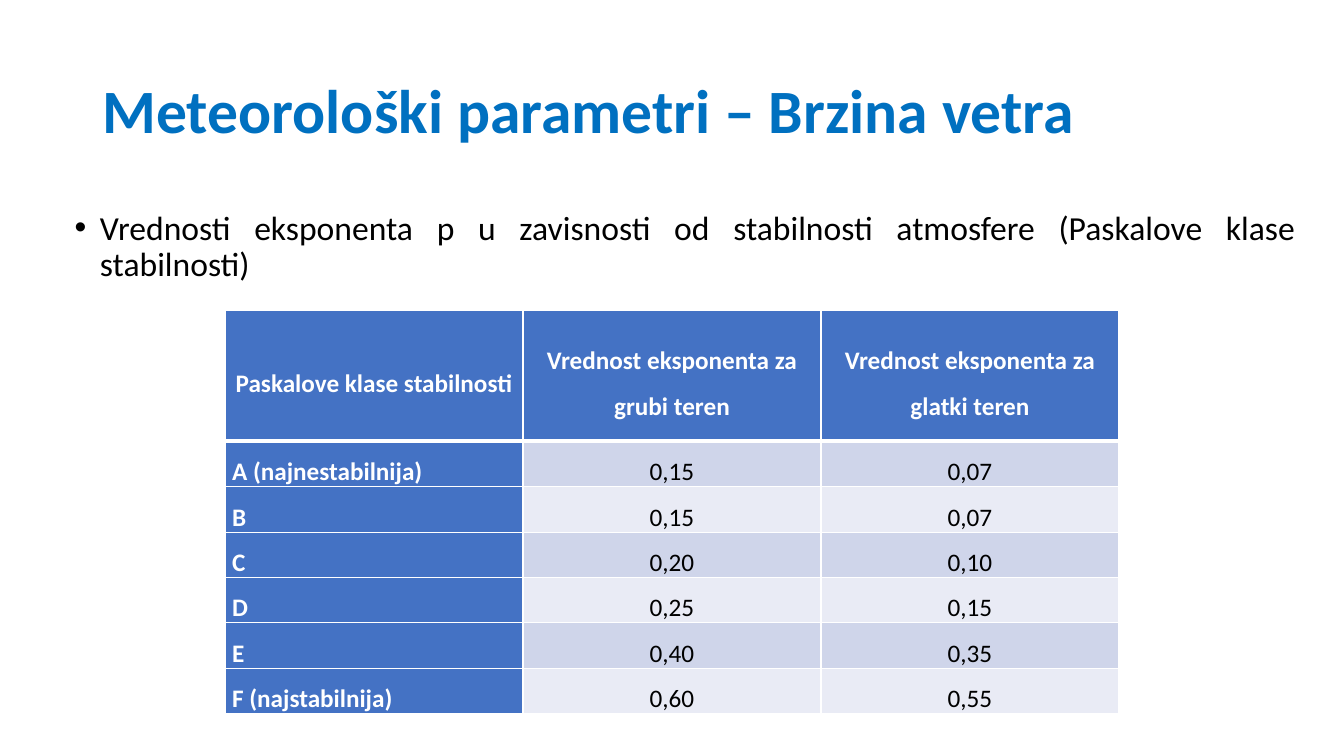
from lxml import etree
from pptx import Presentation
from pptx.dml.color import RGBColor
from pptx.enum.text import MSO_ANCHOR, PP_ALIGN
from pptx.oxml.ns import qn
from pptx.util import Cm, Pt

BLUE, WHITE, BLACK = "4472C4", "FFFFFF", "000000"
BANDS = ("CFD5EA", "E9EBF5")
HEADINGS = (
    "Paskalove klase stabilnosti",
    "Vrednost eksponenta za grubi teren",
    "Vrednost eksponenta za glatki teren",
)
EXPONENTS = (
    ("A (najnestabilnija)", "0,15", "0,07"),
    ("B", "0,15", "0,07"),
    ("C", "0,20", "0,10"),
    ("D", "0,25", "0,15"),
    ("E", "0,40", "0,35"),
    ("F (najstabilnija)", "0,60", "0,55"),
)


def color(hex_value):
    """Turn a hex string into a colour."""
    return RGBColor.from_string(hex_value)


def write(frame, text, size, hex_value, bold=False, align=None, spacing=0.9):
    """Put one formatted paragraph in a text frame and return it."""
    frame.text = text
    frame.word_wrap = True
    paragraph = frame.paragraphs[0]
    paragraph.alignment = align
    paragraph.line_spacing = spacing
    font = paragraph.runs[0].font
    font.name, font.size, font.bold = "Calibri", Pt(size), bold
    font.color.rgb = color(hex_value)
    return paragraph


def add_title(slide, text):
    """Place and format the slide title."""
    title = slide.shapes.title
    title.left, title.top, title.width, title.height = Cm(2.33), Cm(1.01), Cm(29.21), Cm(3.68)
    title.text_frame.vertical_anchor = MSO_ANCHOR.MIDDLE
    write(title.text_frame, text, 44, "0070C0", True, PP_ALIGN.LEFT)


def add_bullet(slide, text):
    """Add a justified statement with a hanging bullet."""
    statement = slide.shapes.add_textbox(Cm(1.63), Cm(5.2), Cm(31.27), Cm(2.1))
    paragraph = write(statement.text_frame, text, 24, BLACK, align=PP_ALIGN.JUSTIFY)
    properties = paragraph._p.get_or_add_pPr()
    properties.set("marL", str(Cm(0.64)))
    properties.set("indent", str(-Cm(0.64)))
    etree.SubElement(properties, qn("a:buFont"), typeface="Arial")
    etree.SubElement(properties, qn("a:buChar"), char="•")


def add_borders(cell, top, bottom):
    """Draw white cell borders with the given top and bottom widths."""
    properties = cell._tc.get_or_add_tcPr()
    for side, width in (("L", 1), ("R", 1), ("T", top), ("B", bottom)):
        line = etree.SubElement(properties, qn(f"a:ln{side}"), w=str(Pt(width)))
        fill = etree.SubElement(line, qn("a:solidFill"))
        etree.SubElement(fill, qn("a:srgbClr"), val=WHITE)


def format_cell(cell, text, row, column):
    """Fill one table cell according to its row and column."""
    heading, label = row == 0, column == 0
    strong = heading or label
    add_borders(cell, 3 if row == 1 else 1, 3 if heading else 1)
    cell.fill.solid()
    cell.fill.fore_color.rgb = color(BLUE if strong else BANDS[(row - 1) % 2])
    cell.margin_left = cell.margin_right = Cm(0.18)
    cell.margin_top = cell.margin_bottom = 0
    cell.vertical_anchor = MSO_ANCHOR.MIDDLE if heading else MSO_ANCHOR.TOP
    align = PP_ALIGN.JUSTIFY if label and not heading else PP_ALIGN.CENTER
    paragraph = write(cell.text_frame, text, 18, WHITE if strong else BLACK, strong, align, 1.5)
    paragraph.space_after = Pt(12)


def add_exponent_table(slide):
    """Add the table of exponents by stability class."""
    rows = (HEADINGS, *EXPONENTS)
    table = slide.shapes.add_table(
        len(rows), len(HEADINGS), Cm(5.67), Cm(7.82), Cm(22.53), Cm(9.72)
    ).table
    for column in table.columns:
        column.width = Cm(7.51)
    for index, texts in enumerate(rows):
        table.rows[index].height = Cm(1.07 if index else 3.3)
        for column, text in enumerate(texts):
            format_cell(table.cell(index, column), text, index, column)


def main():
    """Build and save the wind speed slide."""
    presentation = Presentation()
    presentation.slide_width, presentation.slide_height = Cm(33.87), Cm(19.05)
    slide = presentation.slides.add_slide(presentation.slide_layouts[5])
    add_title(slide, "Meteorološki parametri – Brzina vetra")
    add_bullet(
        slide,
        "Vrednosti eksponenta p u zavisnosti od stabilnosti atmosfere "
        "(Paskalove klase stabilnosti)",
    )
    add_exponent_table(slide)
    presentation.save("out.pptx")


if __name__ == "__main__":
    main()
